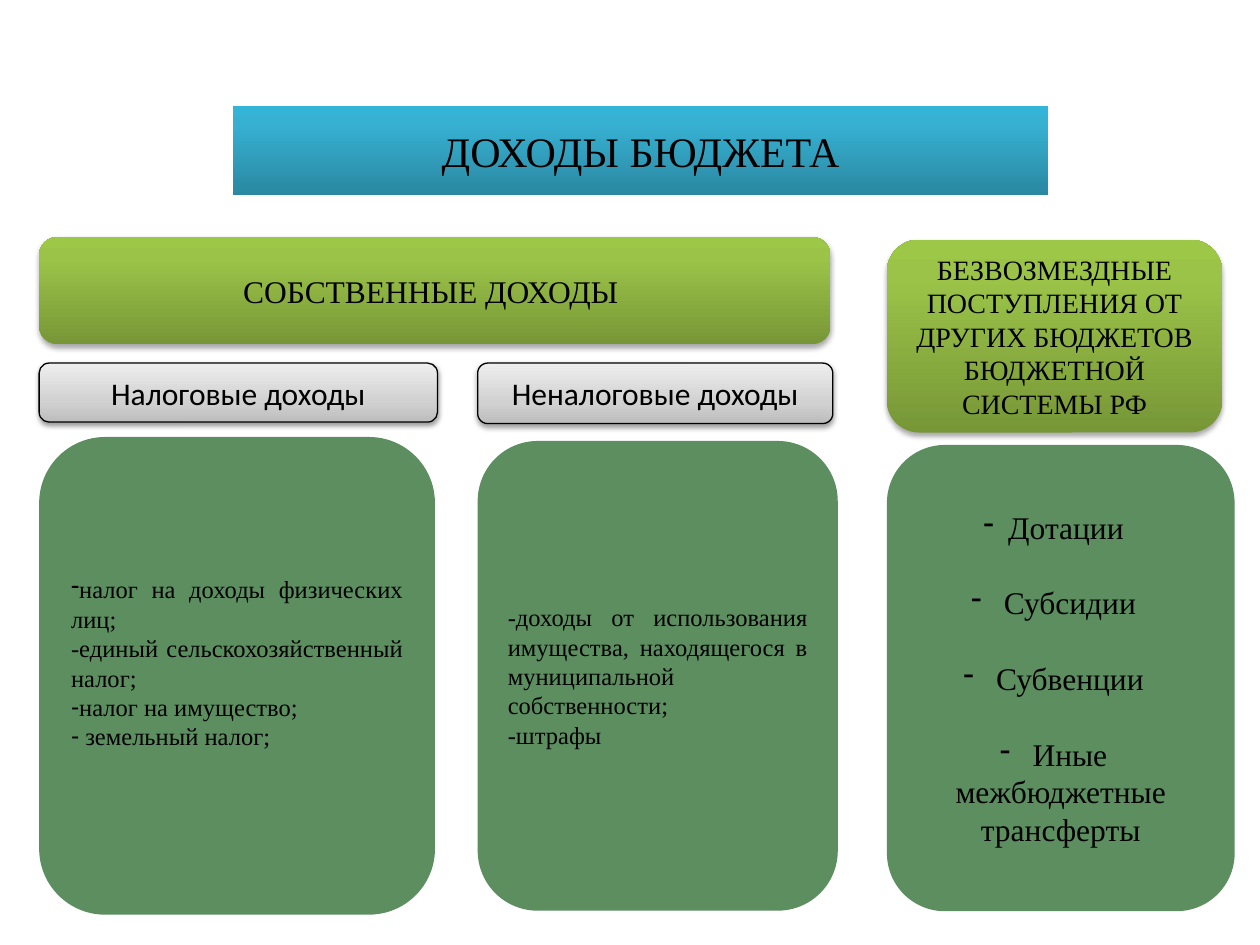
from copy import deepcopy

from lxml.etree import SubElement
from pptx import Presentation
from pptx.dml.color import RGBColor
from pptx.enum.shapes import MSO_SHAPE
from pptx.enum.text import MSO_ANCHOR, MSO_AUTO_SIZE, PP_ALIGN
from pptx.oxml.ns import qn
from pptx.util import Cm, Pt

COLORS = {
    "text": "000000", "list": "5C8E60",
    "blue_dark": "2A88A2", "blue_mid": "37B1D2", "blue_light": "34B4D6",
    "green_dark": "779737", "green_mid": "9BC348", "green_light": "9DC746",
    "gray_dark": "BDBDBD", "gray_mid": "D1D1D1", "gray_light": "EEEEEE",
}
MIDDLE_STOP = {"blue": 0.8, "green": 0.8, "gray": 0.35}
SERIF = "Times New Roman"


def color(name):
    return RGBColor.from_string(COLORS[name])


def place(shape, left, top, width, height):
    shape.left, shape.top = Cm(left), Cm(top)
    shape.width, shape.height = Cm(width), Cm(height)


def round_corners(placeholder):
    """Give a placed placeholder the outline of a rounded rectangle."""
    geometry = SubElement(placeholder.element.spPr, qn("a:prstGeom"), prst="roundRect")
    SubElement(geometry, qn("a:avLst"))


def fill_gradient(shape, tone):
    """Fill from dark at the bottom to light at the top."""
    shape.fill.gradient()
    shape.fill.gradient_angle = 90
    stop_list = shape.element.spPr.find(".//" + qn("a:gsLst"))
    stop_list.append(deepcopy(stop_list[-1]))
    positions = (0, MIDDLE_STOP[tone], 1)
    for stop, shade, position in zip(shape.fill.gradient_stops, ("dark", "mid", "light"), positions):
        stop.color.rgb = color(f"{tone}_{shade}")
        stop.position = position


def cast_shadow(shape, distance, opacity):
    effects = shape.element.spPr.find(qn("a:effectLst"))
    shadow = SubElement(effects, qn("a:outerShdw"), blurRad=str(Pt(3.1)), dist=str(Pt(distance)),
                        dir="5400000", algn="t", rotWithShape="0")
    shade = SubElement(shadow, qn("a:srgbClr"), val=COLORS["text"])
    SubElement(shade, qn("a:alpha"), val=str(opacity * 1000))


def set_bullet(paragraph, bullet, indent):
    properties = paragraph._p.get_or_add_pPr()
    properties.set("marL", "0")
    properties.set("indent", str(Cm(indent)))
    if bullet:
        SubElement(properties, qn("a:buFontTx"))
        SubElement(properties, qn("a:buChar"), char=bullet)
    else:
        SubElement(properties, qn("a:buNone"))


def write(shape, lines, size=18, font=SERIF, align=PP_ALIGN.CENTER, spacing=0, indent=0):
    """Write lines, each given as a pair of bullet (or None) and text."""
    frame = shape.text_frame
    frame.word_wrap = True
    frame.auto_size = MSO_AUTO_SIZE.NONE
    frame.vertical_anchor = MSO_ANCHOR.MIDDLE
    for number, (bullet, text) in enumerate(lines):
        paragraph = frame.add_paragraph() if number else frame.paragraphs[0]
        paragraph.alignment = align
        paragraph.space_before = Pt(spacing if number else 0)
        paragraph.space_after = Pt(0)
        set_bullet(paragraph, bullet, indent if bullet else 0)
        run = paragraph.add_run()
        run.text = text
        run.font.size, run.font.name, run.font.bold = Pt(size), font, False
        run.font.color.rgb = color("text")


def title_banner(slide, box):
    title = slide.shapes.title
    place(title, *box)
    round_corners(title)
    fill_gradient(title, "blue")
    write(title, [(None, "ДОХОДЫ БЮДЖЕТА")], size=24)


def heading(slide, box, text, tone="green", **text_format):
    bar = slide.shapes.add_shape(MSO_SHAPE.ROUNDED_RECTANGLE, *map(Cm, box))
    fill_gradient(bar, tone)
    bar.shadow.inherit = False
    if tone == "gray":
        bar.line.color.rgb = color("text")
        bar.line.width = Pt(0.75)
        cast_shadow(bar, 1.6, 38)
    else:
        bar.line.fill.background()
        cast_shadow(bar, 1.8, 35)
    write(bar, [(None, text)], **text_format)


def income_column(slide, box, heading_size, gap, heading_text, heading_format,
                  items_holder, items, items_format, foot=0.13):
    """Place a heading at the top of the box and its list in the rest."""
    left, top, width, height = box
    heading(slide, (left, top, *heading_size), heading_text, **heading_format)
    offset = heading_size[1] + gap
    place(items_holder, left, top + offset, width, height - offset)
    round_corners(items_holder)
    items_holder.fill.solid()
    items_holder.fill.fore_color.rgb = color("list")
    write(items_holder, items, **items_format)
    items_holder.text_frame.margin_bottom = Cm(foot)


def main():
    presentation = Presentation()
    presentation.slide_width, presentation.slide_height = Cm(25.4), Cm(19.05)
    slide = presentation.slides.add_slide(presentation.slide_layouts[4])
    holders = {holder.placeholder_format.idx: holder for holder in slide.placeholders}
    spare = holders[3].element
    spare.getparent().remove(spare)

    title_banner(slide, (4.7, 2.13, 16.43, 1.8))
    heading(slide, (0.79, 4.78, 15.95, 2.16), "СОБСТВЕННЫЕ ДОХОДЫ ")

    own_heading = {"tone": "gray", "font": "Calibri"}
    own_items = {"size": 14, "align": PP_ALIGN.JUSTIFY}
    income_column(
        slide, (0.79, 7.32, 7.98, 11.12), (8.03, 1.19), 0.3, "Налоговые доходы", own_heading,
        holders[2], [
            ("-", "налог на доходы физических лиц;"),
            (None, "-единый сельскохозяйственный налог;"),
            ("-", "налог на имущество;"),
            ("-", " земельный налог;"),
        ], own_items, foot=0.66)
    income_column(
        slide, (9.63, 7.32, 7.26, 11.04), (7.16, 1.22), 0.35, "Неналоговые доходы", own_heading,
        holders[4], [
            (None, "-доходы от использования имущества, находящегося в муниципальной собственности;"),
            (None, "-штрафы"),
        ], own_items)
    income_column(
        slide, (17.88, 4.83, 7.01, 13.54), (6.76, 3.89), 0.25,
        "БЕЗВОЗМЕЗДНЫЕ ПОСТУПЛЕНИЯ ОТ ДРУГИХ БЮДЖЕТОВ БЮДЖЕТНОЙ СИСТЕМЫ РФ", {"size": 16},
        holders[1], [
            ("-", "Дотации"),
            ("-", " Субсидии"),
            ("-", " Субвенции"),
            ("-", " Иные межбюджетные трансферты"),
        ], {"spacing": 21.6, "indent": -0.5})

    presentation.save("out.pptx")


if __name__ == "__main__":
    main()
